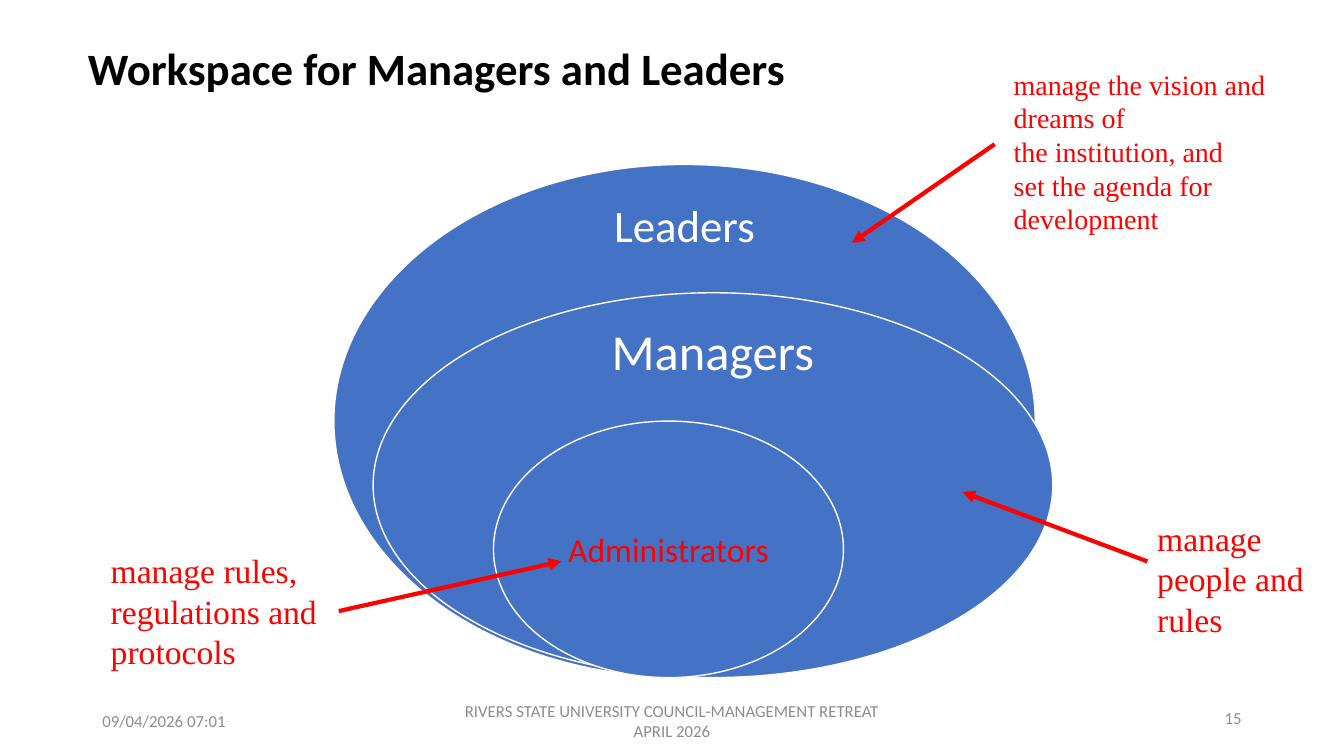
import pptx
import pptx.util
import pptx.dml.color
import pptx.enum.shapes
import pptx.enum.text
import pptx.oxml
import pptx.oxml.ns

Pt = pptx.util.Pt
RGBColor = pptx.dml.color.RGBColor
ALIGN = pptx.enum.text.PP_ALIGN
ANCHOR = pptx.enum.text.MSO_ANCHOR

BLACK = RGBColor(0x00, 0x00, 0x00)
WHITE = RGBColor(0xFF, 0xFF, 0xFF)
BLUE = RGBColor(0x44, 0x72, 0xC4)
RED = RGBColor(0xFF, 0x00, 0x00)
GREY = RGBColor(0x8C, 0x8C, 0x8C)


def style_text(frame, lines, size, color, font="Calibri", align=ALIGN.LEFT,
               anchor=ANCHOR.TOP, bold=False, spacing=1.0):
    """Fill a text frame with one evenly styled paragraph per line."""
    frame.word_wrap = True
    frame.auto_size = pptx.enum.text.MSO_AUTO_SIZE.NONE
    frame.vertical_anchor = anchor
    frame.text = "\n".join(lines)
    for paragraph in frame.paragraphs:
        paragraph.alignment = align
        paragraph.line_spacing = spacing
        paragraph.font.name = font
        paragraph.font.size = Pt(size)
        paragraph.font.bold = bold
        paragraph.font.color.rgb = color


def add_text(slide, box, lines, size, color, **style):
    """Add a text box at box, given as left, top, width and height."""
    label = slide.shapes.add_textbox(*map(Pt, box))
    style_text(label.text_frame, lines, size, color, **style)


def add_title(slide, box, wording):
    """Place and format the title placeholder."""
    title = slide.shapes.title
    title.left, title.top, title.width, title.height = map(Pt, box)
    style_text(title.text_frame, [wording], 32, BLACK, align=ALIGN.CENTER,
               anchor=ANCHOR.MIDDLE, bold=True, spacing=0.9)


def add_workspace(slide, box):
    """Draw nested roles, each a quarter shorter and resting on the box bottom."""
    left, top, width, height = box
    label_height = 54
    roles = [
        ("Leaders", 0, 501, 45.5, 32, WHITE, 0.9),
        ("Managers", 28, 485.5, 43.5, 36, WHITE, 0.9),
        ("Administrators", 114, 250, 91.5, 24, RED, 1.0),
    ]
    for level, (role, inset, role_width, label_drop, size, color, spacing) in enumerate(roles):
        role_height = height * (4 - level) / 4
        role_left, role_top = left + inset, top + height - role_height
        ellipse = slide.shapes.add_shape(
            pptx.enum.shapes.MSO_SHAPE.OVAL,
            Pt(role_left), Pt(role_top), Pt(role_width), Pt(role_height))
        ellipse.shadow.inherit = False
        ellipse.fill.solid()
        ellipse.fill.fore_color.rgb = BLUE
        ellipse.line.color.rgb = WHITE
        ellipse.line.width = Pt(1)
        label_box = (role_left, role_top + label_drop - label_height / 2,
                     role_width, label_height)
        add_text(slide, label_box, [role], size, color, align=ALIGN.CENTER,
                 anchor=ANCHOR.MIDDLE, spacing=spacing)


def add_duty(slide, box, lines, size, start, end):
    """Add a red note and its arrow, with arrow ends relative to the note box."""
    left, top, _, _ = box
    add_text(slide, box, lines, size, RED, font="Times New Roman")
    arrow = slide.shapes.add_connector(
        pptx.enum.shapes.MSO_CONNECTOR.STRAIGHT,
        Pt(left + start[0]), Pt(top + start[1]), Pt(left + end[0]), Pt(top + end[1]))
    arrow.line.color.rgb = RED
    arrow.line.width = Pt(3)
    head = pptx.oxml.parse_xml(
        f'<a:tailEnd {pptx.oxml.ns.nsdecls("a")} type="triangle"/>')
    arrow.line._get_or_add_ln().append(head)
    arrow._element.spPr.append(
        pptx.oxml.parse_xml(f'<a:effectLst {pptx.oxml.ns.nsdecls("a")}/>'))


def add_footer(slide, box):
    """Add the date, event and slide number along the bottom."""
    left, top, width, height = box
    parts = [
        ("09/04/2026 07:01", 0, 0, 216, ALIGN.LEFT),
        ("RIVERS STATE UNIVERSITY COUNCIL-MANAGEMENT RETREAT APRIL 2026",
         252, 0, 324, ALIGN.CENTER),
        ("15", width - 216, -2, 216, ALIGN.RIGHT),
    ]
    for wording, inset, drop, part_width, align in parts:
        add_text(slide, (left + inset, top + drop, part_width, height), [wording],
                 12, GREY, align=align, anchor=ANCHOR.MIDDLE)


def main():
    """Build the slide and save it."""
    deck = pptx.Presentation()
    deck.slide_width, deck.slide_height = Pt(960), Pt(540)
    slide = deck.slides.add_slide(deck.slide_layouts.get_by_name("Title Only"))
    add_title(slide, (39, 11, 546, 79), "Workspace for Managers and Leaders")
    add_workspace(slide, (238.5, 117.5, 513, 366.5))
    add_footer(slide, (66, 500.5, 828, 29))
    add_duty(slide, (717, 44.5, 204, 128),
             ["manage the vision and dreams of", "the institution, and",
              "set the agenda for development"],
             20, (-6.5, 58.5), (-108.5, 129))
    add_duty(slide, (819.5, 366.5, 131, 94.5), ["manage people and rules"],
             24, (0, 34.5), (-132, -15))
    add_duty(slide, (72, 389.5, 170, 94.5), ["manage rules, regulations and protocols"],
             24, (170, 47), (329, 11.5))
    deck.save("out.pptx")


if __name__ == "__main__":
    main()
